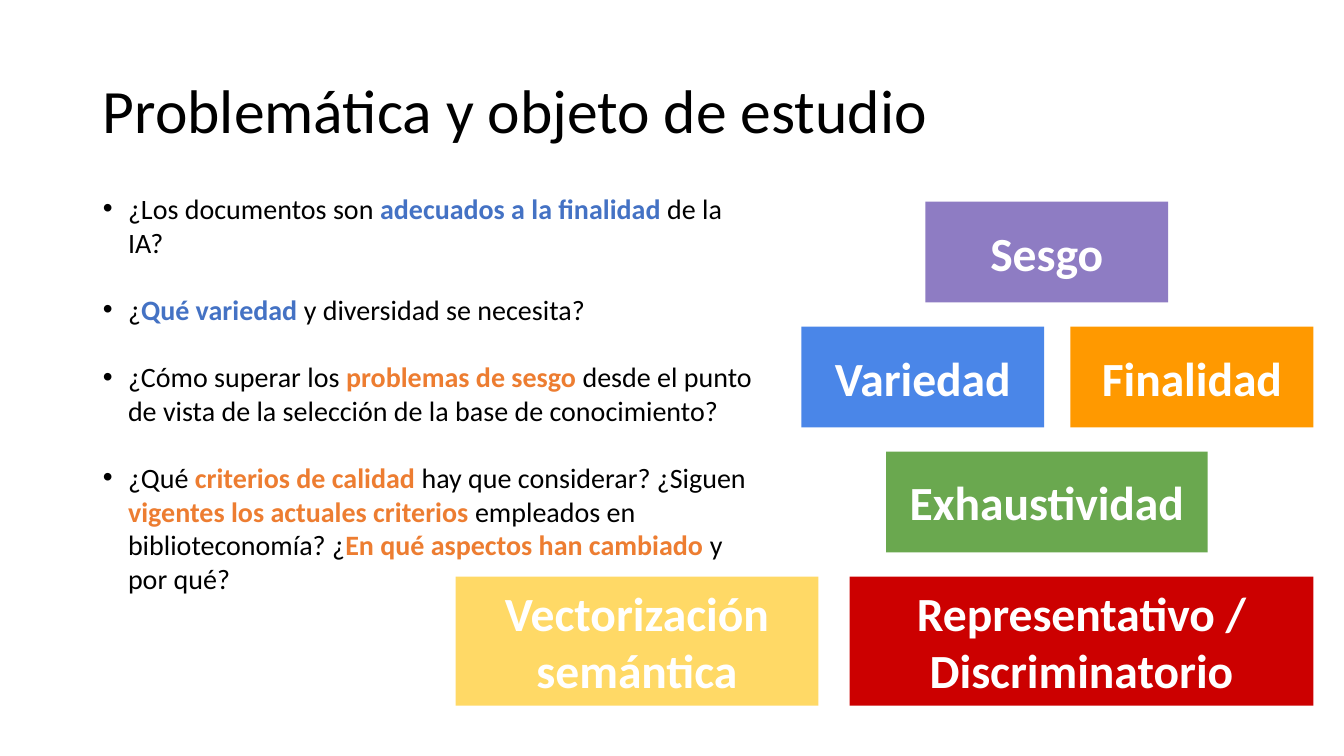
import pptx
import pptx.util
import pptx.dml.color
import pptx.enum.shapes
import pptx.enum.text

Inches = pptx.util.Inches
Pt = pptx.util.Pt
Align = pptx.enum.text.PP_ALIGN
Anchor = pptx.enum.text.MSO_ANCHOR

THEME = {
    "font": "Calibri",
    "title": Pt(44),
    "question": Pt(20),
    "criterion": Pt(34),
    "black": "000000",
    "white": "FFFFFF",
    "blue": "4472C4",
    "orange": "ED7D31",
    "bias": "8E7CC3",
    "variety": "4A86E8",
    "purpose": "FF9900",
    "completeness": "6AA84F",
    "vectors": "FFD966",
    "representative": "CC0000",
}


def set_values(target, **values):
    for name, value in values.items():
        setattr(target, name, value)


def add_words(paragraph, words, size, color, bold=False):
    run = paragraph.add_run()
    run.text = words
    set_values(run.font, name=THEME["font"], size=THEME[size], bold=bold)
    run.font.color.rgb = pptx.dml.color.RGBColor.from_string(THEME[color])


deck = pptx.Presentation()
set_values(deck, slide_width=Inches(40 / 3), slide_height=Inches(7.5))
slide = deck.slides.add_slide(deck.slide_layouts[1])

heading = slide.shapes.title
set_values(heading, left=Inches(0.92), top=Inches(0.4),
           width=Inches(11.5), height=Inches(1.45))
set_values(heading.text_frame, word_wrap=True, vertical_anchor=Anchor.MIDDLE,
           auto_size=pptx.enum.text.MSO_AUTO_SIZE.NONE)
heading_line = heading.text_frame.paragraphs[0]
set_values(heading_line, alignment=Align.LEFT, line_spacing=0.9)
add_words(heading_line, "Problemática y objeto de estudio", "title", "black")

QUESTIONS = [
    [("¿Los documentos son ", "black"), ("adecuados a la finalidad ", "blue"),
     ("de la IA?", "black")],
    [("¿", "black"), ("Qué variedad ", "blue"),
     ("y diversidad se necesita?", "black")],
    [("¿Cómo superar los ", "black"), ("problemas de sesgo ", "orange"),
     ("desde el punto de vista de la selección de la base de conocimiento?", "black")],
    [("¿Qué ", "black"), ("criterios de calidad ", "orange"),
     ("hay que considerar? ¿Siguen ", "black"),
     ("vigentes los actuales criterios ", "orange"),
     ("empleados en biblioteconomía? ¿", "black"),
     ("En qué aspectos han cambiado ", "orange"), ("y por qué?", "black")],
]

questions = slide.placeholders[1]
set_values(questions, left=Inches(0.92), top=Inches(1.85),
           width=Inches(6.7), height=Inches(4.76))
set_values(questions.text_frame, word_wrap=True, vertical_anchor=Anchor.TOP,
           auto_size=pptx.enum.text.MSO_AUTO_SIZE.NONE)
for index, phrases in enumerate(QUESTIONS):
    if index:
        question = questions.text_frame.add_paragraph()
    else:
        question = questions.text_frame.paragraphs[0]
    indents = question._p.get_or_add_pPr()
    indents.set("marL", str(Inches(0.25)))
    indents.set("indent", str(Inches(-0.26)))
    set_values(question, space_before=Pt(24 if index else 0),
               space_after=Pt(0), line_spacing=1.0)
    for words, color in phrases:
        add_words(question, words, "question", color, color != "black")

ROW_TOP, ROW_STEP = 2, 1.24
CRITERIA = [
    ("Sesgo", "bias", 0, 9.18, 2.41, 1),
    ("Variedad", "variety", 1, 7.95, 2.41, 1),
    ("Finalidad", "purpose", 1, 10.62, 2.41, 1),
    ("Exhaustividad", "completeness", 2, 8.79, 3.19, 1),
    ("Vectorización semántica", "vectors", 3, 4.52, 3.6, 1.28),
    ("Representativo / Discriminatorio", "representative", 3, 8.43, 4.6, 1.28),
]

for label, color, row, left, width, height in CRITERIA:
    criterion = slide.shapes.add_shape(
        pptx.enum.shapes.MSO_SHAPE.RECTANGLE, Inches(left),
        Inches(ROW_TOP + row * ROW_STEP), Inches(width), Inches(height))
    criterion.shadow.inherit = False
    criterion.fill.solid()
    criterion.fill.fore_color.rgb = pptx.dml.color.RGBColor.from_string(THEME[color])
    criterion.line.fill.background()
    margins = {f"margin_{side}": Inches(0.1) for side in ("left", "top", "right", "bottom")}
    set_values(criterion.text_frame, word_wrap=True,
               vertical_anchor=Anchor.MIDDLE, **margins)
    label_line = criterion.text_frame.paragraphs[0]
    label_line.alignment = Align.CENTER
    add_words(label_line, label, "criterion", "white", True)

deck.save("out.pptx")
